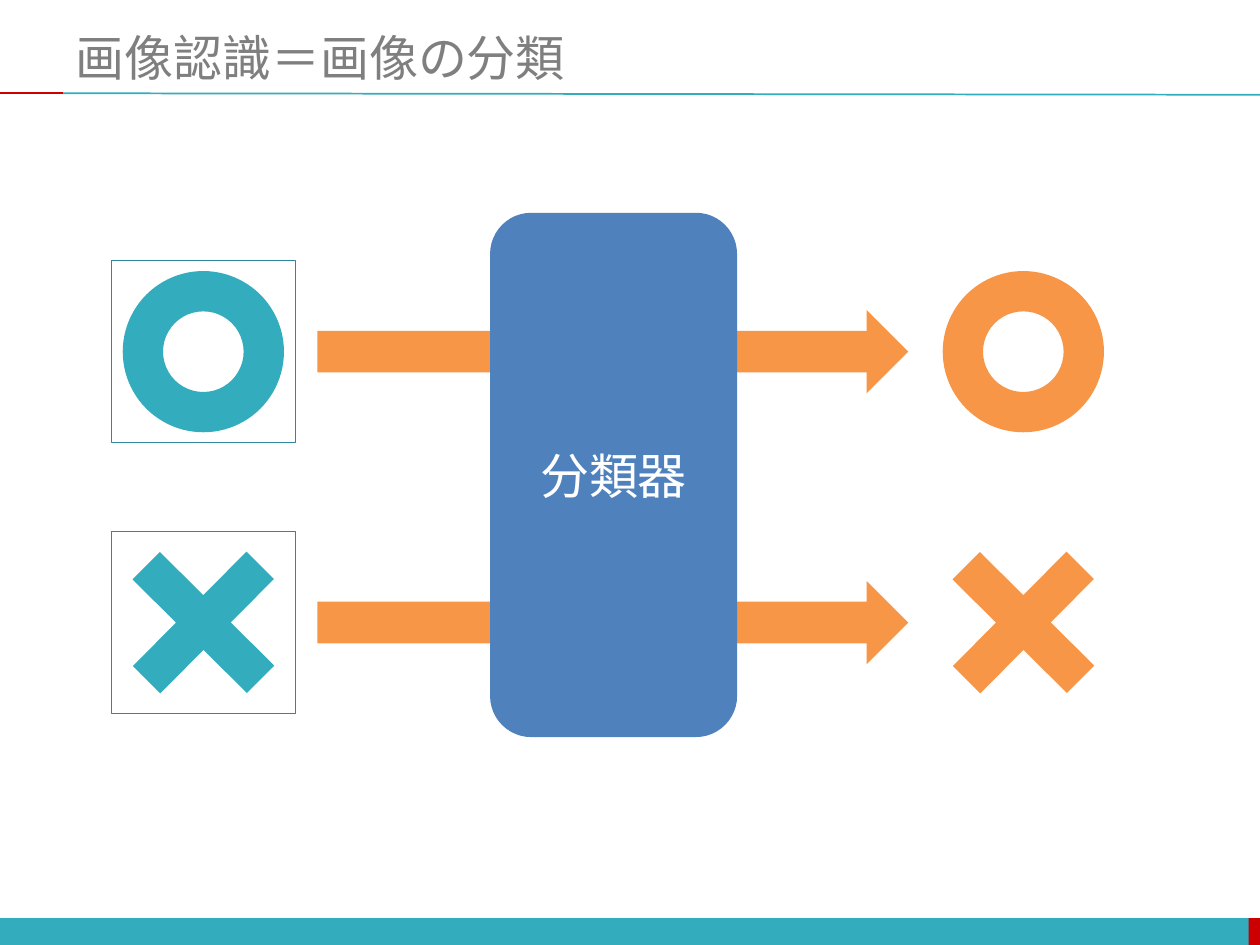
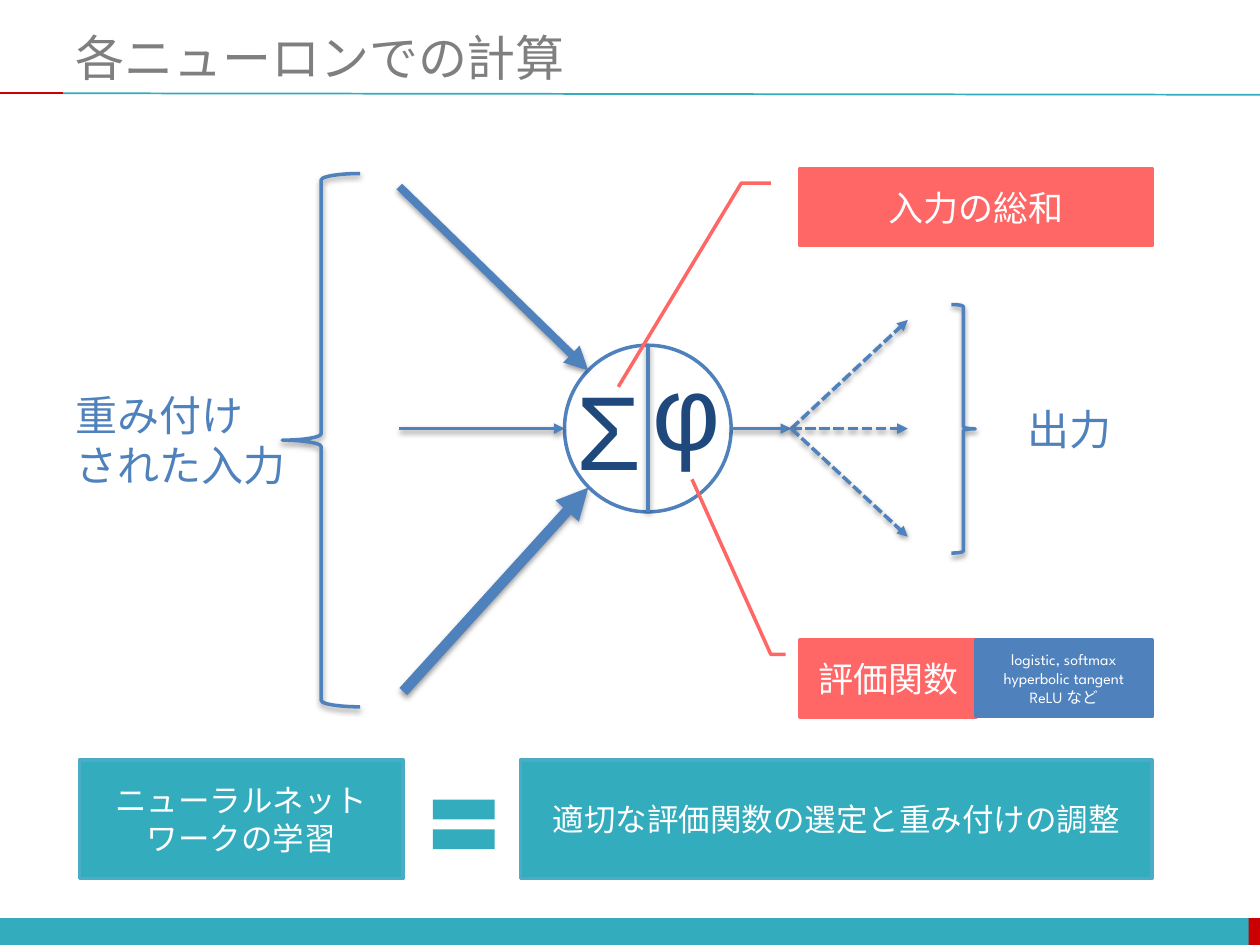
from dataclasses import dataclass

from lxml.etree import SubElement
from pptx import Presentation
from pptx.dml.color import RGBColor
from pptx.enum.dml import MSO_LINE_DASH_STYLE as Dash
from pptx.enum.shapes import MSO_CONNECTOR as Connector, MSO_SHAPE as Shape
from pptx.enum.text import MSO_ANCHOR as Anchor, MSO_AUTO_SIZE as AutoSize, PP_ALIGN as Align
from pptx.oxml.ns import qn
from pptx.util import Cm, Pt


@dataclass(frozen=True)
class Theme:
    teal: str = "33ACBD"
    teal_edge: str = "4BACC6"
    frame: str = "31859C"
    red: str = "CC0000"
    coral: str = "FF6666"
    blue: str = "4F81BD"
    navy: str = "1F497D"
    orange: str = "F79646"
    grey: str = "7F7F7F"
    white: str = "FFFFFF"
    latin: str = "League Spartan"
    japanese: str = "Noto Sans CJK JP"
    symbol: str = "Arial"
    title_size: int = 28
    label_size: int = 24
    callout_size: int = 20
    summary_size: int = 18
    note_size: int = 9
    symbol_size: int = 60
    stroke: float = 2


THEME = Theme()
WIDTH, HEIGHT = 25.4, 19.05

# All lengths are centimetres; boxes are (left, top, width, height).
CLASSIFIER_TITLE = "画像認識＝画像の分類"
CLASSIFIER = ("分類器", (9.88, 4.29, 4.98, 10.57))
MARKS = [(Shape.DONUT, 0, []), (Shape.CROSS, 44.8, [0.38])]
ROW_CENTRE, ROW_STEP = 7.09, 5.46
INPUT_CENTRE, OUTPUT_CENTRE, MARK_SIZE = 4.1, 20.63, 3.25
FRAME_SIZE = (3.7, 3.66)
FLOW_LEFT, FLOW_SIZE = 6.4, (11.91, 1.68)

NEURON_TITLE = "各ニューロンでの計算"
NEURON_CENTRE, NEURON_RADIUS = (13.06, 8.64), 1.68
AXIS = NEURON_CENTRE[1]
NEURON_LEFT, NEURON_RIGHT = NEURON_CENTRE[0] - NEURON_RADIUS, NEURON_CENTRE[0] + NEURON_RADIUS
BRANCH = (15.95, AXIS)
INPUT_ARROWS = [  # start, end, line width
    ((8.05, 3.76), (11.86, 7.47), 4.5),
    ((8.05, AXIS), (NEURON_LEFT, AXIS), 2),
    ((8.13, 13.94), (11.86, 9.83), 6),
]
OUTPUT_ENDS = [(18.3, AXIS + rise) for rise in (-2.19, 0, 2.18)]
SYMBOLS = [("Σ", (11, 7.37, 2.54, 2.54)), ("φ", (12.57, 6.96, 2.54, 2.54))]
BRACES = [(Shape.LEFT_BRACE, (5.69, 3.5, 1.57, 10.75)),
          (Shape.RIGHT_BRACE, (19.18, 6.14, 0.48, 5.01))]
SIDE_LABELS = [(["重み付け", "された入力"], (1.27, 7.6, 3.96, 2.54)),
               (["出力"], (20.47, 8.1, 2.26, 1.1))]
CALLOUT_START = [0.188, -0.083, 0.188, -0.167]
CALLOUTS = [("入力の総和", (16.13, 3.4, 7.09, 1.55), [2.838, -0.517]),
            ("評価関数", (16.13, 12.9, 3.55, 1.55), [-2.089, -0.614])]
FUNCTIONS = (["logistic, softmax", "hyperbolic tangent", "ReLU など"], (19.67, 12.9, 3.55, 1.55))
SUMMARIES = [("ニューラルネット\vワークの学習", (1.6, 15.32, 6.53, 2.39)),
             ("適切な評価関数の選定と重み付けの調整", (10.49, 15.32, 12.73, 2.39))]
EQUALS = (8.5, 15.77, 1.7, 1.7)


def centred(x, y, width, height):
    return x - width / 2, y - height / 2, width, height


def add_shadow(effects):
    """Fill an effect list with the soft shadow below lines and braces."""
    shadow = SubElement(effects, qn("a:outerShdw"), blurRad="40000", dist="20000",
                        dir="5400000", rotWithShape="0")
    colour = SubElement(shadow, qn("a:srgbClr"), val="000000")
    SubElement(colour, qn("a:alpha"), val="38000")


def write(shape, lines, size, colour, font, align=Align.CENTER, wrap=True):
    frame = shape.text_frame
    frame.text = "\n".join(lines)
    frame.word_wrap = wrap
    frame.auto_size = AutoSize.NONE
    frame.vertical_anchor = Anchor.MIDDLE
    for paragraph in frame.paragraphs:
        paragraph.alignment = align
        paragraph.font.size = Pt(size)
        paragraph.font.name = font
        paragraph.font.bold = False
        paragraph.font.color.rgb = RGBColor.from_string(colour)


def add_shape(slide, kind, box, fill=None, line=None, line_width=THEME.stroke, adjustments=()):
    shape = slide.shapes.add_shape(kind, *map(Cm, box))
    shape.shadow.inherit = False
    if fill:
        shape.fill.solid()
        shape.fill.fore_color.rgb = RGBColor.from_string(fill)
    else:
        shape.fill.background()
    if line:
        shape.line.color.rgb = RGBColor.from_string(line)
        shape.line.width = Pt(line_width)
    else:
        shape.line.fill.background()
    for index, value in enumerate(adjustments):
        shape.adjustments[index] = value
    return shape


def add_text(slide, lines, box, size, colour, font, align):
    box_shape = slide.shapes.add_textbox(*map(Cm, box))
    write(box_shape, lines, size, colour, font, align, wrap=False)


def add_line(slide, start, end, colour=THEME.blue, width=THEME.stroke,
             arrow=False, dashed=False, shadow=True):
    line = slide.shapes.add_connector(Connector.STRAIGHT, *map(Cm, (*start, *end)))
    line.line.color.rgb = RGBColor.from_string(colour)
    line.line.width = Pt(width)
    if dashed:
        line.line.dash_style = Dash.SQUARE_DOT
    properties = line.element.spPr
    if arrow:
        SubElement(properties.find(qn("a:ln")), qn("a:tailEnd"), type="triangle")
    effects = SubElement(properties, qn("a:effectLst"))
    if shadow:
        add_shadow(effects)


def add_slide(presentation, title_text):
    """Add a slide with the shared title, rule and footer band."""
    slide = presentation.slides.add_slide(presentation.slide_layouts[5])
    title = slide.shapes.title
    title.left, title.top, title.width, title.height = map(Cm, (1.27, 0.56, 24.13, 1.17))
    write(title, [title_text], THEME.title_size, THEME.grey, THEME.latin, Align.LEFT)
    for left, width, colour in [(0, WIDTH, THEME.teal), (25.17, 0.23, THEME.red)]:
        add_shape(slide, Shape.RECTANGLE, (left, 18.51, width, 0.54), colour)
    add_line(slide, (1.27, 1.88), (WIDTH, 1.91), THEME.teal, 1, shadow=False)
    add_line(slide, (0, 1.88), (1.27, 1.88), THEME.red, 1, shadow=False)
    return slide


def build_classifier(presentation):
    slide = add_slide(presentation, CLASSIFIER_TITLE)
    for row, (kind, rotation, adjustments) in enumerate(MARKS):
        y = ROW_CENTRE + row * ROW_STEP
        flow_width, flow_height = FLOW_SIZE
        add_shape(slide, Shape.RIGHT_ARROW,
                  (FLOW_LEFT, y - flow_height / 2, flow_width, flow_height), THEME.orange)
        for x, colour in [(INPUT_CENTRE, THEME.teal), (OUTPUT_CENTRE, THEME.orange)]:
            mark = add_shape(slide, kind, centred(x, y, MARK_SIZE, MARK_SIZE), colour,
                             adjustments=adjustments)
            mark.rotation = rotation
        add_shape(slide, Shape.RECTANGLE, centred(INPUT_CENTRE, y, *FRAME_SIZE),
                  line=THEME.frame, line_width=0.5)
    label, box = CLASSIFIER
    classifier = add_shape(slide, Shape.ROUNDED_RECTANGLE, box, THEME.blue)
    write(classifier, [label], THEME.title_size, THEME.white, THEME.japanese)


def build_neuron(presentation):
    slide = add_slide(presentation, NEURON_TITLE)
    x, y = NEURON_CENTRE
    add_shape(slide, Shape.OVAL, centred(x, y, 2 * NEURON_RADIUS, 2 * NEURON_RADIUS),
              line=THEME.blue)
    for start, end, width in INPUT_ARROWS:
        add_line(slide, start, end, width=width, arrow=True)
    add_line(slide, (x, y - NEURON_RADIUS), (x, y + NEURON_RADIUS))
    add_line(slide, (NEURON_RIGHT, AXIS), BRANCH, arrow=True)
    for symbol, box in SYMBOLS:
        add_text(slide, [symbol], box, THEME.symbol_size, THEME.navy, THEME.symbol, Align.CENTER)
    for end in OUTPUT_ENDS:
        add_line(slide, BRANCH, end, arrow=True, dashed=True)

    for kind, box in BRACES:
        brace = add_shape(slide, kind, box, line=THEME.blue)
        add_shadow(brace.element.spPr.find(qn("a:effectLst")))
    for lines, box in SIDE_LABELS:
        add_text(slide, lines, box, THEME.label_size, THEME.blue, THEME.latin, Align.LEFT)

    for label, box, target in CALLOUTS:
        callout = add_shape(slide, Shape.LINE_CALLOUT_2, box, THEME.coral, THEME.coral,
                            adjustments=CALLOUT_START + target)
        write(callout, [label], THEME.callout_size, THEME.white, THEME.japanese)
    for label, box in SUMMARIES:
        summary = add_shape(slide, Shape.RECTANGLE, box, THEME.teal, THEME.teal_edge)
        write(summary, [label], THEME.summary_size, THEME.white, THEME.japanese)
    add_shape(slide, Shape.MATH_EQUAL, EQUALS, THEME.teal)
    lines, box = FUNCTIONS
    functions = add_shape(slide, Shape.RECTANGLE, box, THEME.blue, THEME.blue)
    write(functions, lines, THEME.note_size, THEME.white, THEME.latin)


def set_japanese_font(slide):
    """Give every formatted text the same East Asian typeface."""
    for latin in list(slide.element.iter(qn("a:latin"))):
        east_asian = SubElement(latin.getparent(), qn("a:ea"), typeface=THEME.japanese)
        latin.addnext(east_asian)


def main():
    presentation = Presentation()
    presentation.slide_width, presentation.slide_height = Cm(WIDTH), Cm(HEIGHT)
    build_classifier(presentation)
    build_neuron(presentation)
    for slide in presentation.slides:
        set_japanese_font(slide)
    presentation.save("out.pptx")


if __name__ == "__main__":
    main()
